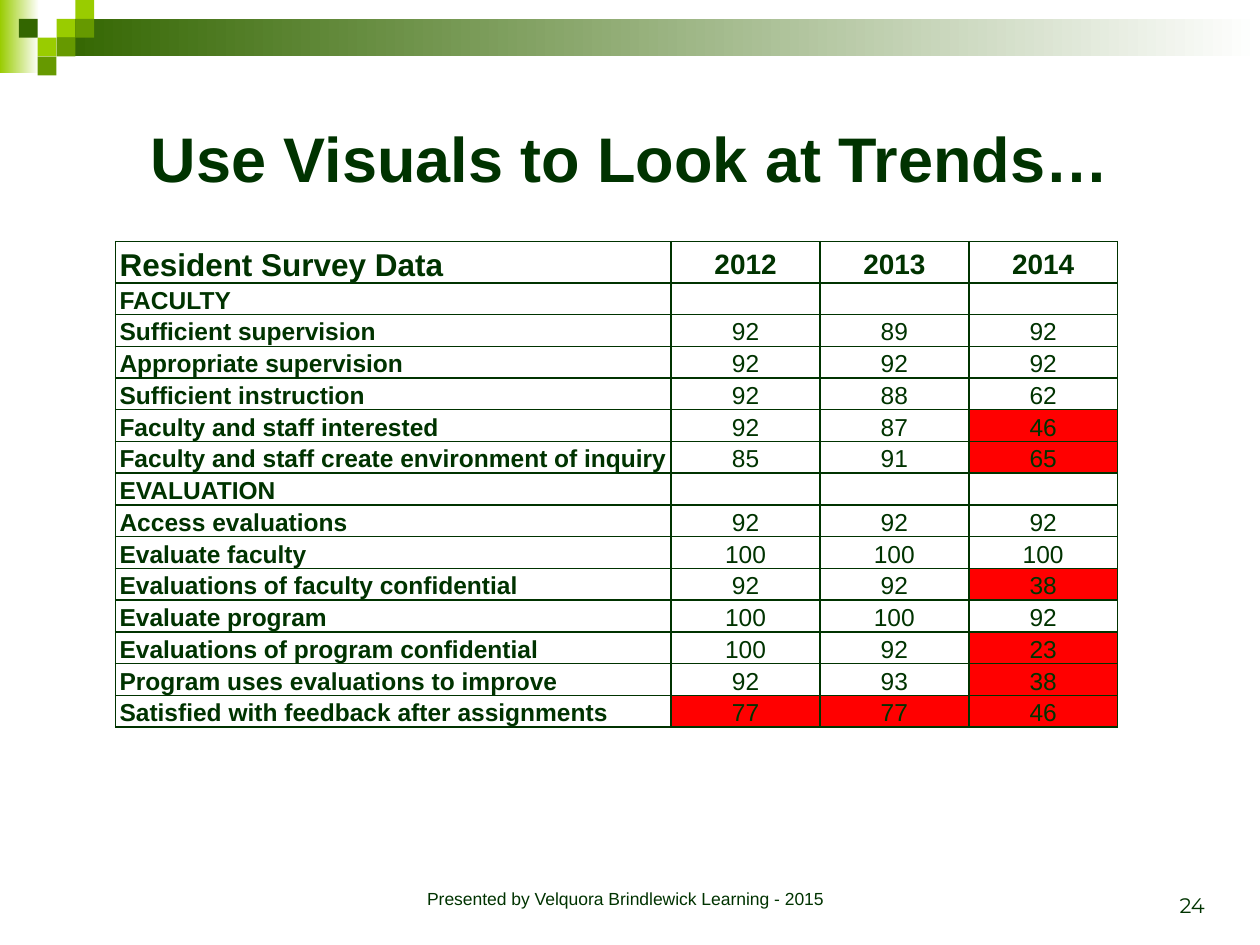
from lxml import etree
from pptx import Presentation
from pptx.dml.color import RGBColor
from pptx.enum import shapes, text
from pptx.oxml import parse_xml
from pptx.oxml.ns import nsdecls, qn
from pptx.util import Cm, Pt

INK = RGBColor(0x00, 0x33, 0x00)
WHITE = RGBColor(0xFF, 0xFF, 0xFF)
RED = RGBColor(0xFF, 0x00, 0x00)
LIME = RGBColor(0x99, 0xCC, 0x00)
GREEN = RGBColor(0x66, 0x99, 0x00)
FOREST = RGBColor(0x33, 0x66, 0x00)

LEFT, CENTER, RIGHT = text.PP_ALIGN.LEFT, text.PP_ALIGN.CENTER, text.PP_ALIGN.RIGHT
TOP, MIDDLE, BOTTOM = (text.MSO_ANCHOR.TOP, text.MSO_ANCHOR.MIDDLE,
                       text.MSO_ANCHOR.BOTTOM)

UNIT = 0.38  # side of a decoration square, cm
SQUARES = [(3, 1, LIME), (4, 0, LIME), (4, 1, GREEN), (2, 2, LIME),
           (1, 1, FOREST), (3, 2, GREEN), (2, 3, GREEN)]

YEARS = ["2012", "2013", "2014"]
SURVEY = [
    ("FACULTY",),
    ("Sufficient supervision", 92, 89, 92),
    ("Appropriate supervision", 92, 92, 92),
    ("Sufficient instruction", 92, 88, 62),
    ("Faculty and staff interested", 92, 87, 46),
    ("Faculty and staff create environment of inquiry", 85, 91, 65),
    ("EVALUATION",),
    ("Access evaluations", 92, 92, 92),
    ("Evaluate faculty", 100, 100, 100),
    ("Evaluations of faculty confidential", 92, 92, 38),
    ("Evaluate program", 100, 100, 92),
    ("Evaluations of program confidential", 100, 92, 23),
    ("Program uses evaluations to improve", 92, 93, 38),
    ("Satisfied with feedback after assignments", 77, 77, 46),
]
FLAGGED = {(5, 3), (6, 3), (10, 3), (12, 3), (13, 3), (14, 1), (14, 2), (14, 3)}


def write(tf, content, size, font="Arial", bold=False, align=LEFT, spacing=None):
    p = tf.paragraphs[0]
    p.alignment = align
    p.line_spacing = spacing
    if not content:  # an empty cell keeps its row low through its end mark
        etree.SubElement(p._p, qn("a:endParaRPr"), sz=str(size * 100))
        return
    r = p.add_run()
    r.text = content
    r.font.size, r.font.name, r.font.bold = Pt(size), font, bold
    r.font.color.rgb = INK


def add_block(s, x, y, w, h, color, fade=False):
    """Add a borderless rectangle, fading to white on the right if asked."""
    sp = s.shapes.add_shape(shapes.MSO_SHAPE.RECTANGLE, Cm(x), Cm(y), Cm(w), Cm(h))
    sp.shadow.inherit = False
    sp.line.fill.background()
    if fade:
        sp.fill.gradient()
        sp.fill.gradient_angle = 0
        for stop, position, rgb in zip(sp.fill.gradient_stops, (0, 1), (color, WHITE)):
            stop.position = position
            stop.color.rgb = rgb
    else:
        sp.fill.solid()
        sp.fill.fore_color.rgb = color


def add_decoration(s):
    add_block(s, 0, 0, 0.79, 1.47, LIME, fade=True)
    add_block(s, 3 * UNIT, UNIT, 25.4 - 3 * UNIT, 2 * UNIT, FOREST, fade=True)
    for col, row, color in SQUARES:
        add_block(s, col * UNIT, row * UNIT, UNIT, UNIT, color)


def set_title(s, content):
    title = s.shapes.title
    title.left, title.top, title.width, title.height = Cm(1.27), Cm(1.27), Cm(22.86), Cm(3.81)
    tf = title.text_frame
    tf.auto_size = text.MSO_AUTO_SIZE.NONE
    tf.vertical_anchor = MIDDLE
    write(tf, content, 36, bold=True, align=CENTER)


def add_text(s, x, y, w, h, content, anchor=TOP, **fmt):
    tf = s.shapes.add_textbox(Cm(x), Cm(y), Cm(w), Cm(h)).text_frame
    tf.word_wrap = True
    tf.vertical_anchor = anchor
    write(tf, content, **fmt)


def set_borders(cell):
    tc_pr = cell._tc.get_or_add_tcPr()
    for i, side in enumerate(("lnL", "lnR", "lnT", "lnB")):
        tc_pr.insert(i, parse_xml(
            f'<a:{side} {nsdecls("a")} w="12700"><a:solidFill>'
            f'<a:srgbClr val="{INK}"/></a:solidFill></a:{side}>'))


def format_cell(cell, content, fill, anchor, **fmt):
    cell.margin_left = cell.margin_right = Cm(0.08)
    cell.margin_top = cell.margin_bottom = 0
    cell.vertical_anchor = anchor
    cell.fill.solid()
    cell.fill.fore_color.rgb = fill
    set_borders(cell)
    write(cell.text_frame, content, spacing=1.15, **fmt)


def add_survey_table(s):
    heights = [0.83] + [0.64] * len(SURVEY)
    widths = [11.2] + [3] * len(YEARS)
    table = s.shapes.add_table(len(heights), len(widths), Cm(2.33), Cm(4.87),
                               Cm(sum(widths)), Cm(sum(heights))).table
    for col, width in zip(table.columns, widths):
        col.width = Cm(width)
    for row, height in zip(table.rows, heights):
        row.height = Cm(height)

    format_cell(table.cell(0, 0), "Resident Survey Data", WHITE, BOTTOM, size=18, bold=True)
    for j, year in enumerate(YEARS, 1):
        format_cell(table.cell(0, j), year, WHITE, MIDDLE, size=16, bold=True, align=CENTER)
    for i, (label, *scores) in enumerate(SURVEY, 1):
        format_cell(table.cell(i, 0), label, WHITE, BOTTOM, size=14, bold=True)
        for j, score in enumerate(scores or [""] * len(YEARS), 1):
            format_cell(table.cell(i, j), str(score), RED if (i, j) in FLAGGED else WHITE,
                        TOP if j == len(YEARS) else BOTTOM, size=14, align=CENTER)


def main():
    prs = Presentation()
    prs.slide_width, prs.slide_height = Cm(25.4), Cm(19.05)
    s = prs.slides.add_slide(prs.slide_layouts[5])
    add_decoration(s)
    set_title(s, "Use Visuals to Look at Trends…")
    add_survey_table(s)
    add_text(s, 18.62, 17.35, 5.92, 1.27, "24", anchor=BOTTOM,
             size=12, font="Montserrat", align=RIGHT)
    add_text(s, 6.99, 17.78, 11.23, 0.84,
             "Presented by Velquora Brindlewick Learning - 2015",
             size=10, align=CENTER)
    prs.save("out.pptx")


if __name__ == "__main__":
    main()
